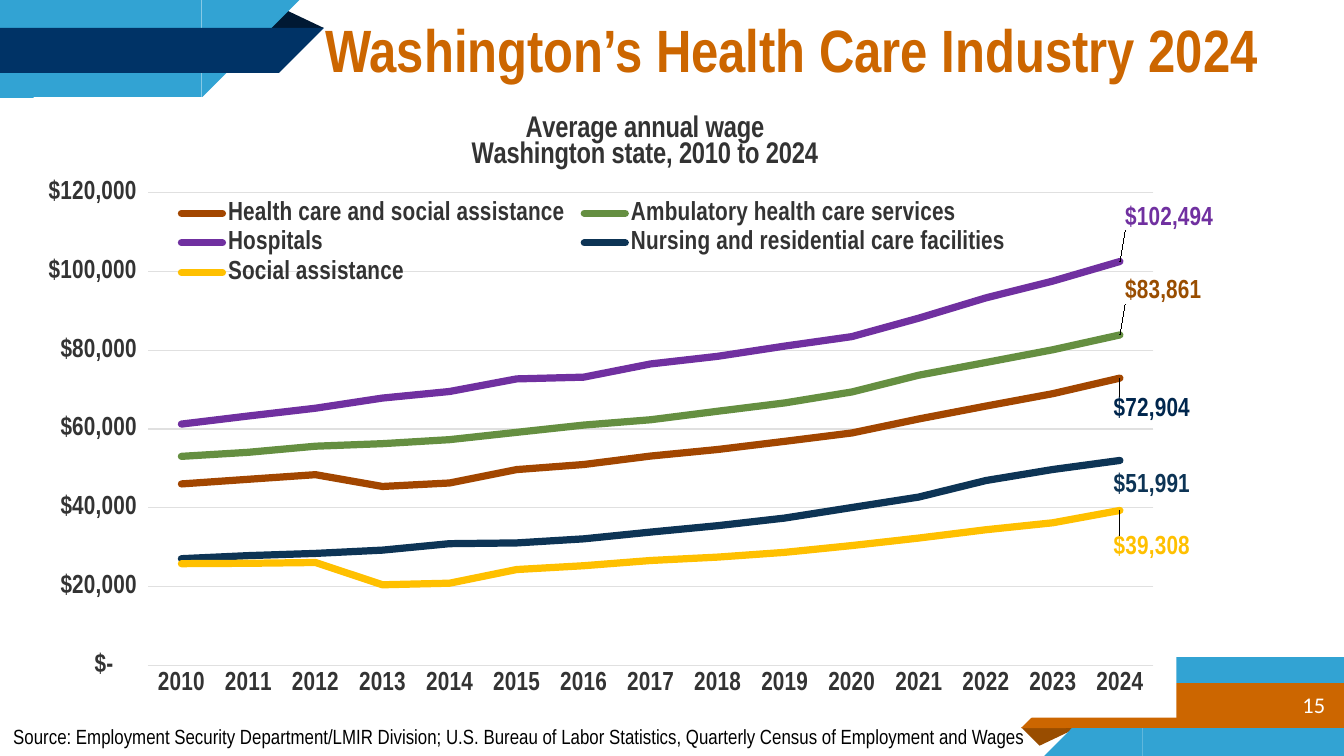
from pptx import Presentation
from pptx import util as u
from pptx.chart.data import CategoryChartData
from pptx.dml.color import RGBColor
from pptx.enum import chart as ch, shapes, text
from pptx.oxml import parse_xml
from pptx.oxml.ns import nsdecls, qn

Pt = u.Pt
WHITE = RGBColor(0xFF, 0xFF, 0xFF)
BLACK = RGBColor(0, 0, 0)
SKY = RGBColor(0x32, 0xA3, 0xD3)
NAVY = RGBColor(0x00, 0x33, 0x66)
MIDNIGHT = RGBColor(0x00, 0x19, 0x33)
ORANGE = RGBColor(0xCC, 0x66, 0x00)
BROWN = RGBColor(0x99, 0x4D, 0x00)
INK = RGBColor(0x33, 0x33, 0x33)
GRID = RGBColor(0xE0, 0xE0, 0xE0)
RUST = RGBColor(0xA2, 0x46, 0x00)
GREEN = RGBColor(0x65, 0x8F, 0x41)
PURPLE = RGBColor(0x70, 0x30, 0xA0)
STEEL = RGBColor(0x0D, 0x34, 0x55)
DEEP = RGBColor(0x00, 0x26, 0x4D)
GOLD = RGBColor(0xFF, 0xC0, 0x00)
NARROW = "Arial Narrow"

WAGES = [
    ("Health care and social assistance", RUST, DEEP, (-0.01, 0.05),
     [46042, 47218, 48383, 45387, 46280, 49669, 50964, 53118, 54774, 56847,
      58972, 62518, 65799, 68956, 72904]),
    ("Ambulatory health care services", GREEN, BROWN, (0, -0.07),
     [53037, 54061, 55606, 56251, 57278, 59131, 60969, 62328, 64491, 66611,
      69385, 73648, 76863, 80094, 83861]),
    ("Hospitals", PURPLE, PURPLE, (0, -0.07),
     [61216, 63270, 65247, 67836, 69507, 72708, 73145, 76503, 78434, 81024,
      83434, 88118, 93262, 97526, 102494]),
    ("Nursing and residential care facilities", STEEL, STEEL, (-0.01, 0.04),
     [27067, 27847, 28406, 29244, 30878, 31067, 32103, 33811, 35448, 37377,
      40049, 42708, 46899, 49695, 51991]),
    ("Social assistance", GOLD, GOLD, (-0.01, 0.06),
     [25806, 25895, 26092, 20447, 20841, 24309, 25278, 26611, 27463, 28669,
      30398, 32293, 34412, 36175, 39308]),
]


def set_font(font, color, **fmt):
    """Apply a colour and a dict of font attributes."""
    font.color.rgb = color
    for name, value in fmt.items():
        setattr(font, name, value)


def set_layout(parent, index, edge=True, inner=False, **fractions):
    """Give a chart part a manual layout in fractions of the chart."""
    for old in parent.findall(qn("c:layout")):
        parent.remove(old)
    parts = '<c:layoutTarget val="inner"/>' if inner else ""
    if edge:
        parts += '<c:xMode val="edge"/><c:yMode val="edge"/>'
    parts += "".join(f'<c:{k} val="{v}"/>' for k, v in fractions.items())
    parent.insert(index, parse_xml(
        f'<c:layout {nsdecls("c")}><c:manualLayout>{parts}</c:manualLayout></c:layout>'))


def add_ribbon(s, left, top, parts):
    """Draw the ribbon pieces relative to a corner."""
    for kind, x, y, w, h, color, flip in parts:
        sp = s.shapes.add_shape(kind, Pt(left + x), Pt(top + y), Pt(w), Pt(h))
        sp.shadow.inherit = False
        sp.fill.solid()
        sp.fill.fore_color.rgb = color
        sp.line.fill.background()
        if flip:
            sp._element.spPr.find(qn("a:xfrm")).set(flip, "1")
        if kind == shapes.MSO_SHAPE.ISOSCELES_TRIANGLE:
            sp.adjustments[0] = 0.32


def add_ribbons(s):
    """Place the top left and bottom right ribbons."""
    rect = shapes.MSO_SHAPE.RECTANGLE
    corner = shapes.MSO_SHAPE.RIGHT_TRIANGLE
    fold = shapes.MSO_SHAPE.ISOSCELES_TRIANGLE
    add_ribbon(s, 547, 352, [
        (fold, 0, 37.5, 31, 10, BROWN, "flipV"),
        (rect, 65, 0, 108, 53, SKY, None),
        (corner, 12.5, 0, 52.5, 53, SKY, "flipH"),
        (rect, 24, 14, 149, 24, ORANGE, None),
        (corner, 0, 14, 24, 24, ORANGE, "flipH")])
    add_ribbon(s, 0, 0, [
        (fold, 142.5, 5, 31, 10, MIDNIGHT, None),
        (rect, 0, 0, 108, 52.5, SKY, None),
        (corner, 108, 0, 52.5, 52.5, SKY, "flipV"),
        (rect, 0, 15, 149.5, 24, NAVY, None),
        (corner, 149.5, 15, 24, 24, NAVY, "flipV")])


def fill_text(sp, box, words, color, inset, align, anchor, **fmt):
    """Place a text shape in its box and write one formatted paragraph."""
    for name, value in zip(("left", "top", "width", "height"), box):
        setattr(sp, name, Pt(value))
    tf = sp.text_frame
    frame = {"word_wrap": True, "auto_size": text.MSO_AUTO_SIZE.NONE,
             "vertical_anchor": anchor, "margin_left": Pt(7.2),
             "margin_right": Pt(7.2), "margin_top": Pt(inset),
             "margin_bottom": Pt(inset)}
    for name, value in frame.items():
        setattr(tf, name, value)
    p = tf.paragraphs[0]
    p.alignment = align
    r = p.add_run()
    r.text = words
    set_font(r.font, color, **fmt)


def style_series(series, color, label_color, offset):
    """Draw a series line and label its last point."""
    series.smooth = False
    series.format.line.color.rgb = color
    series.format.line.width = Pt(4)
    series.format.line._get_or_add_ln().set("cap", "rnd")
    series.data_labels.show_value = False
    label = series.points[14].data_label
    set_font(label.font, label_color, name=NARROW, size=Pt(14), bold=True)
    label.position = ch.XL_LABEL_POSITION.RIGHT
    labels = series.data_labels._element
    set_layout(labels.find(qn("c:dLbl")), 1, edge=False, x=offset[0], y=offset[1])
    labels.append(parse_xml(
        f'<c:extLst {nsdecls("c")}><c:ext uri="{{CE6537A1-D6FC-4f65-9D91-7224C49458BB}}" '
        'xmlns:c15="http://schemas.microsoft.com/office/drawing/2012/chart">'
        '<c15:showLeaderLines val="1"/></c:ext></c:extLst>'))


def style_axes(chart):
    """Format both axes and the gridlines."""
    value, category = chart.value_axis, chart.category_axis
    for axis in (value, category):
        axis.major_tick_mark = axis.minor_tick_mark = ch.XL_TICK_MARK.NONE
        set_font(axis.tick_labels.font, INK, name=NARROW, size=Pt(14), bold=True)
    for name, amount in {"minimum_scale": 0, "maximum_scale": 120000,
                         "major_unit": 20000}.items():
        setattr(value, name, amount)
    value.tick_labels.number_format = (
        '_("$"* #,##0_);_("$"* \\(#,##0\\);_("$"* "-"??_);_(@_)')
    value.tick_labels.number_format_is_linked = False
    value.format.line.fill.background()
    for line in (value.major_gridlines.format.line, category.format.line):
        line.color.rgb = GRID
        line.width = Pt(0.75)


def add_wage_chart(s, left, top, width, height):
    """Add the wage line chart in the given box."""
    data = CategoryChartData(number_format='"$"#,##0')
    data.categories = [str(year) for year in range(2010, 2025)]
    for name, *_, values in WAGES:
        data.add_series(name, values)
    chart = s.shapes.add_chart(ch.XL_CHART_TYPE.LINE, Pt(left), Pt(top),
                               Pt(width), Pt(height), data).chart
    set_font(chart.font, INK, name=NARROW, size=Pt(14), bold=True)
    space = chart._chartSpace
    space.find(qn("c:chart")).addnext(parse_xml(
        f'<c:spPr {nsdecls("c", "a")}><a:solidFill><a:srgbClr val="{WHITE}"/>'
        '</a:solidFill><a:ln><a:noFill/></a:ln></c:spPr>'))
    chart.plots[0].vary_by_categories = False
    for series, (_, color, label_color, offset, _) in zip(chart.plots[0].series, WAGES):
        style_series(series, color, label_color, offset)
    style_axes(chart)
    chart.has_title = True
    tf = chart.chart_title.text_frame
    tf.text = "Average annual wage\nWashington state, 2010 to 2024"
    for p in tf.paragraphs:
        p.line_spacing = 0.85
        for r in p.runs:
            set_font(r.font, INK, name=NARROW, size=Pt(16), bold=True)
    set_layout(chart.chart_title._element, 1, x=0.38, y=0.02)
    chart.has_legend = True
    chart.legend.position = ch.XL_LEGEND_POSITION.BOTTOM
    chart.legend.include_in_layout = False
    set_font(chart.legend.font, INK, name=NARROW, size=Pt(14), bold=True)
    set_layout(chart.legend._element, 1, x=0.12, y=0.16, w=0.74, h=0.15)
    set_layout(space.find(".//" + qn("c:plotArea")), 0, inner=True,
               x=0.1, y=0.154, w=0.88, h=0.762)


def main():
    """Build the slide and save it."""
    prs = Presentation()
    prs.slide_width, prs.slide_height = Pt(720), Pt(405)
    s = prs.slides.add_slide(prs.slide_layouts[5])
    add_ribbons(s)
    left, right = text.PP_ALIGN.LEFT, text.PP_ALIGN.RIGHT
    top, middle = text.MSO_ANCHOR.TOP, text.MSO_ANCHOR.MIDDLE
    fill_text(s.shapes.title, (167, 0, 553, 52), "Washington’s Health Care Industry 2024",
              ORANGE, 7.2, left, middle, name=NARROW, size=Pt(32), bold=True)
    fill_text(s.shapes.add_textbox(0, 0, 0, 0), (600, 365, 117, 25), "15",
              WHITE, 7.2, right, middle, name="Calibri", size=Pt(12))
    fill_text(s.shapes.add_textbox(0, 0, 0, 0), (0, 384.5, 567, 20),
              "Source: Employment Security Department/LMIR Division; U.S. Bureau of Labor "
              "Statistics, Quarterly Census of Employment and Wages",
              BLACK, 3.6, left, top, name=NARROW, size=Pt(11))
    add_wage_chart(s, 18, 52, 632, 332.5)
    prs.save("out.pptx")


if __name__ == "__main__":
    main()
